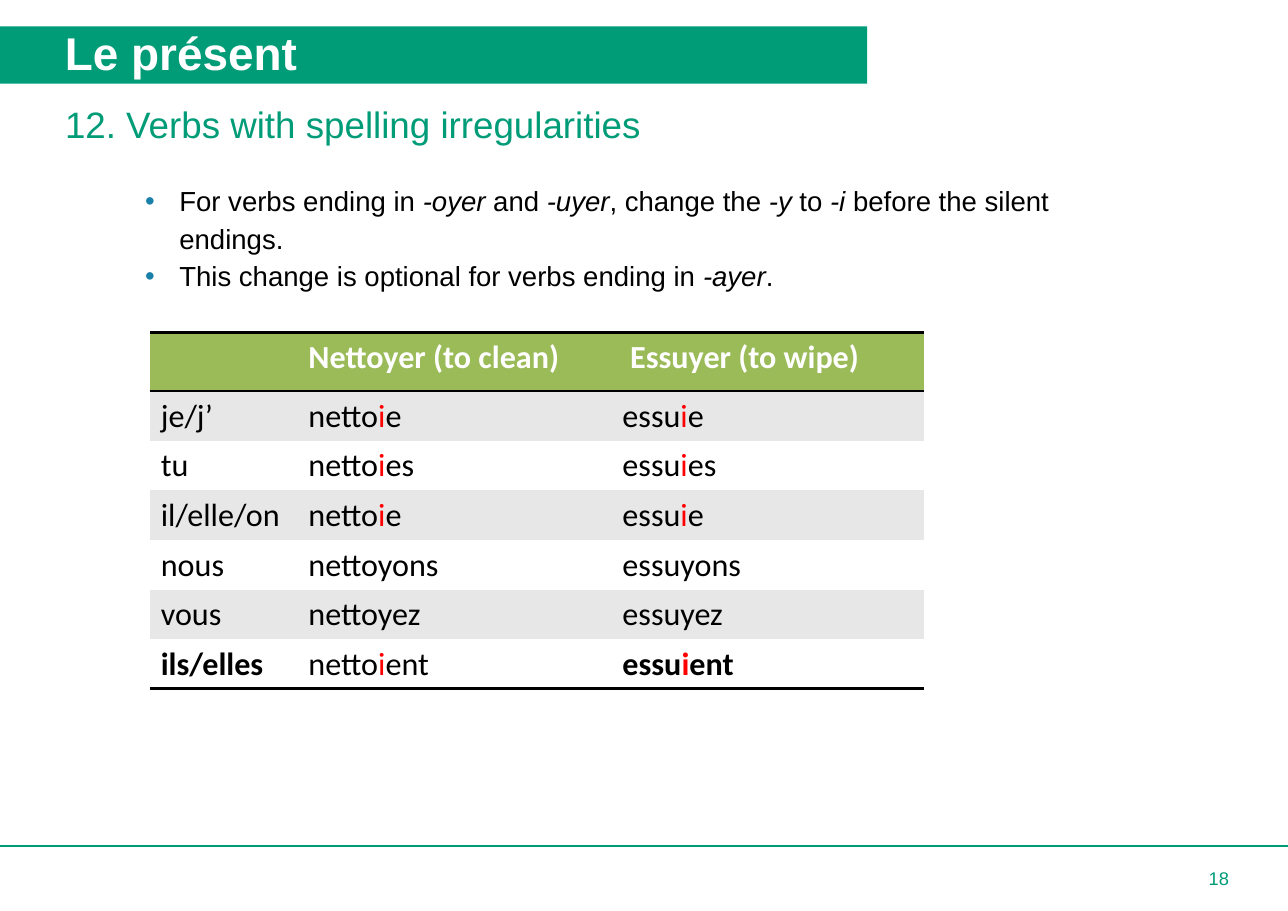
from lxml import etree
from pptx import Presentation
from pptx.dml.color import RGBColor
from pptx.enum.shapes import MSO_CONNECTOR, MSO_SHAPE
from pptx.enum.text import MSO_ANCHOR, PP_ALIGN
from pptx.oxml.ns import qn
from pptx.util import Inches, Pt

RECT = MSO_SHAPE.RECTANGLE
STRAIGHT = MSO_CONNECTOR.STRAIGHT
TOP, MIDDLE = MSO_ANCHOR.TOP, MSO_ANCHOR.MIDDLE
LEFT = PP_ALIGN.LEFT

COLORS = {
    "green": "009C78", "white": "FFFFFF", "black": "000000", "red": "FF0000",
    "bullet": "1980A9", "header": "9BBB59", "band": "E7E7E7",
}

# Text between bars is emphasised
BULLETS = [
    "For verbs ending in |-oyer| and |-uyer|, change the |-y| to |-i| before the silent endings.",
    "This change is optional for verbs ending in |-ayer|.",
]
HEADINGS = ["", "Nettoyer (to clean)", "Essuyer (to wipe)"]
FORMS = [
    ["je/j’", "netto|i|e", "essu|i|e"],
    ["tu", "netto|i|es", "essu|i|es"],
    ["il/elle/on", "netto|i|e", "essu|i|e"],
    ["nous", "nettoyons", "essuyons"],
    ["vous", "nettoyez", "essuyez"],
    ["ils/elles", "netto|i|ent", "essu|i|ent"],
]
COL_WIDTHS = [1.34, 2.85, 2.84]
HEADER_HEIGHT, ROW_HEIGHT = 0.53, 0.45


def rgb(name):
    return RGBColor.from_string(COLORS[name])


def add_run(p, text, size=18, color="black", font="Arial", bold=False, italic=False):
    r = p.add_run()
    r.text = text
    r.font.name, r.font.size = font, Pt(size)
    r.font.bold, r.font.italic = bold, italic
    r.font.color.rgb = rgb(color)


def write(p, text, accent=None, **fmt):
    """Write text; the parts between bars also take the accent format."""
    p.alignment = LEFT
    for i, part in enumerate(text.split("|")):
        if part:
            add_run(p, part, **{**fmt, **(accent if i % 2 else {})})


def set_frame(tf, left=0.1, top=0.05, anchor=MIDDLE):
    tf.word_wrap = True
    tf.vertical_anchor = anchor
    tf.margin_left, tf.margin_top = Inches(left), Inches(top)
    tf.margin_right, tf.margin_bottom = Inches(0.1), Inches(0.05)
    return tf


def add_text(s, box, **frame):
    return set_frame(s.shapes.add_textbox(*map(Inches, box)).text_frame, **frame)


def add_bar(s, box, color):
    sp = s.shapes.add_shape(RECT, *map(Inches, box))
    sp.shadow.inherit = False
    sp.fill.solid()
    sp.fill.fore_color.rgb = rgb(color)
    sp.line.fill.background()
    return sp


def add_rule(s, y, width):
    line = s.shapes.add_connector(STRAIGHT, 0, Inches(y), Inches(width), Inches(y))
    line.line.color.rgb = rgb("green")
    line.line.width = Pt(0.75)
    etree.SubElement(line._element.spPr, qn("a:effectLst"))


def add_bullets(tf, items):
    for i, item in enumerate(items):
        p = tf.paragraphs[0] if i == 0 else tf.add_paragraph()
        p.line_spacing = Pt(24.6)
        pPr = p._p.get_or_add_pPr()
        pPr.set("marL", str(Inches(0.31)))
        pPr.set("indent", str(Inches(-0.31)))
        clr = etree.SubElement(pPr, qn("a:buClr"))
        etree.SubElement(clr, qn("a:srgbClr"), val=COLORS["bullet"])
        etree.SubElement(pPr, qn("a:buFont"), typeface="Arial")
        etree.SubElement(pPr, qn("a:buChar"), char="•")
        write(p, item, accent={"italic": True})


def set_borders(cell, ruled_sides):
    tcPr = cell._tc.get_or_add_tcPr()
    for side in ("lnL", "lnR", "lnT", "lnB"):
        ln = etree.SubElement(tcPr, qn("a:" + side), w=str(Pt(2)))
        if side in ruled_sides:
            fill = etree.SubElement(ln, qn("a:solidFill"))
            etree.SubElement(fill, qn("a:srgbClr"), val=COLORS["black"])
        else:
            etree.SubElement(ln, qn("a:noFill"))


def add_verb_table(s, left, top):
    rows = [HEADINGS] + FORMS
    height = HEADER_HEIGHT + ROW_HEIGHT * len(FORMS)
    table = s.shapes.add_table(len(rows), len(HEADINGS), Inches(left), Inches(top),
                               Inches(sum(COL_WIDTHS)), Inches(height)).table
    table.first_row = table.horz_banding = False
    for col, width in zip(table.columns, COL_WIDTHS):
        col.width = Inches(width)

    ruled_edges = {0, 1, len(rows)}
    for i, texts in enumerate(rows):
        table.rows[i].height = Inches(ROW_HEIGHT if i else HEADER_HEIGHT)
        fill = "header" if i == 0 else "band" if i % 2 else "white"
        sides = [side for side, edge in (("lnT", i), ("lnB", i + 1)) if edge in ruled_edges]
        for j, text in enumerate(texts):
            cell = table.cell(i, j)
            set_borders(cell, sides)
            cell.fill.solid()
            cell.fill.fore_color.rgb = rgb(fill)
            # The last heading sits slightly inside its column
            cell.margin_left = Inches(0.17 if (i, j) == (0, 2) else 0.1)
            bold = i == 0 or (i == len(FORMS) and j != 1)
            write(cell.text_frame.paragraphs[0], text, accent={"color": "red"},
                  size=21, font="Calibri", bold=bold, color="black" if i else "white")


def main():
    prs = Presentation()
    prs.slide_width, prs.slide_height = Inches(11.69), Inches(8.27)
    s = prs.slides.add_slide(prs.slide_layouts[6])

    # Footer
    add_rule(s, 7.68, 11.69)
    tf = add_text(s, (10.28, 7.68, 1.41, 0.59), left=0.69)
    write(tf.paragraphs[0], "18", size=12, color="green")

    # Title bar and subtitle
    bar = add_bar(s, (0, 0.24, 7.87, 0.52), "green")
    tf = set_frame(bar.text_frame, left=0.59, top=0)
    write(tf.paragraphs[0], "Le présent", size=30, color="white", bold=True)
    tf = add_text(s, (0, 0.89, 11.69, 0.51), left=0.59, top=0)
    write(tf.paragraphs[0], "12. Verbs with spelling irregularities", size=24, color="green")

    # Rules and conjugations
    add_bullets(add_text(s, (1.22, 1.58, 9.26, 1.2), anchor=TOP), BULLETS)
    add_verb_table(s, 1.36, 3.02)

    prs.save("out.pptx")


if __name__ == "__main__":
    main()
